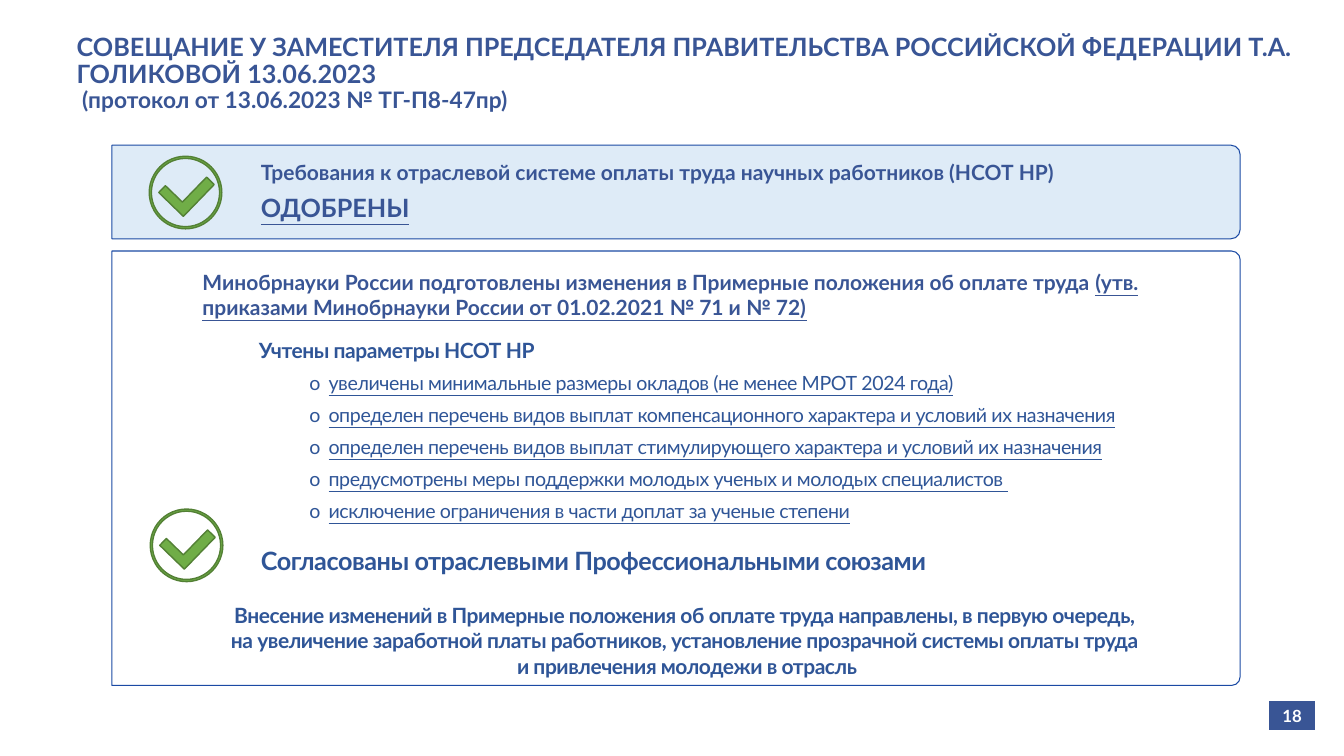
from lxml import etree
from pptx import Presentation
from pptx import util as u
from pptx.dml.color import RGBColor
from pptx.enum import shapes, text
from pptx.oxml.ns import qn

NAVY = RGBColor(0x39, 0x55, 0x95)
BLUE = RGBColor(0x2F, 0x55, 0x97)
EDGE = RGBColor(0x1B, 0x4A, 0xA4)
PALE = RGBColor(0xDE, 0xEB, 0xF7)
GREEN = RGBColor(0x70, 0xAD, 0x47)
DARK_GREEN = RGBColor(0x53, 0x80, 0x35)
WHITE = RGBColor(0xFF, 0xFF, 0xFF)
FONT = "Lato"
LEFT, CENTER, JUSTIFY = text.PP_ALIGN.LEFT, text.PP_ALIGN.CENTER, text.PP_ALIGN.JUSTIFY
SHAPE = shapes.MSO_SHAPE

SLIDE_W, SLIDE_H = 13.33, 7.5
PANEL_X, PANEL_W = 1.11, 11.19
CHANGES = [
    "увеличены минимальные размеры окладов (не менее МРОТ 2024 года)",
    "определен перечень видов выплат компенсационного характера и условий их назначения",
    "определен перечень видов выплат стимулирующего характера и условий их назначения",
    "предусмотрены меры поддержки молодых ученых и молодых специалистов ",
    "исключение ограничения в части доплат за ученые степени",
]


def inches(*lengths):
    return [u.Inches(length) for length in lengths]


def add_run(p, words, size, color, spacing=0, **formats):
    """Add words to a paragraph; each newline becomes a line break."""
    for i, line in enumerate(words.split("\n")):
        if i:
            p.add_line_break()
        if not line:
            continue
        r = p.add_run()
        r.text = line
        r.font.color.rgb = color
        values = {"name": FONT, "size": u.Pt(size), "bold": True, **formats}
        for name, value in values.items():
            setattr(r.font, name, value)
        if spacing:
            r._r.get_or_add_rPr().set("spc", str(round(spacing * 100)))


def add_text(s, box, align, after=6):
    """Add a wrapping text box and return its frame and first paragraph."""
    tf = s.shapes.add_textbox(*inches(*box)).text_frame
    tf.word_wrap = True
    tf.auto_size = text.MSO_AUTO_SIZE.SHAPE_TO_FIT_TEXT
    p = tf.paragraphs[0]
    p.alignment, p.space_after = align, u.Pt(after)
    return tf, p


def add_bullet(p):
    pPr = p._p.get_or_add_pPr()
    pPr.set("marL", str(u.Inches(0.69)))
    pPr.set("indent", str(u.Inches(-0.19)))
    pPr.set("lvl", "1")
    etree.SubElement(pPr, qn("a:buFont")).set("typeface", FONT)
    etree.SubElement(pPr, qn("a:buChar")).set("char", "o")


def add_figure(s, kind, box, adjustments, fill, line, width, rotation=0):
    sp = s.shapes.add_shape(kind, *inches(*box))
    sp.shadow.inherit = False
    sp.rotation = rotation
    for i, value in enumerate(adjustments):
        sp.adjustments[i] = value
    if fill is None:
        sp.fill.background()
    else:
        sp.fill.solid()
        sp.fill.fore_color.rgb = fill
    sp.line.color.rgb = line
    sp.line.width = u.Pt(width)


def add_panel(s, x, y, w, h, corner, fill=None):
    """Frame with two rounded corners on its right side."""
    turned = (x + (w - h) / 2, y + (h - w) / 2, h, w)
    add_figure(s, SHAPE.ROUND_2_SAME_RECTANGLE, turned, (corner, 0), fill, EDGE, 0.75, 90)


def add_check(s, x, y):
    """Green tick inside a ring."""
    add_figure(s, SHAPE.DONUT, (x, y, 0.72, 0.72), (0.03,), GREEN, DARK_GREEN, 1)
    add_figure(s, SHAPE.CORNER, (x + 0.15, y + 0.15, 0.44, 0.34), (0.31, 0.28),
               GREEN, DARK_GREEN, 1, 314.1)


def add_title(s, x, y, w, h):
    sp = s.shapes.title
    sp.left, sp.top, sp.width, sp.height = inches(x, y, w, h)
    tf = sp.text_frame
    for name, value in {"word_wrap": True, "auto_size": text.MSO_AUTO_SIZE.NONE,
                        "vertical_anchor": text.MSO_ANCHOR.MIDDLE}.items():
        setattr(tf, name, value)
    p = tf.paragraphs[0]
    p.alignment, p.line_spacing, p.space_after = LEFT, 0.9, u.Pt(12)
    add_run(p, "СОВЕЩАНИЕ У ЗАМЕСТИТЕЛЯ ПРЕДСЕДАТЕЛЯ ПРАВИТЕЛЬСТВА РОССИЙСКОЙ "
               "ФЕДЕРАЦИИ Т.А. ГОЛИКОВОЙ 13.06.2023\n", 18, NAVY)
    add_run(p, " (протокол от 13.06.2023 № ТГ-П8-47пр)", 16.2, NAVY)


def add_approval(s, x, y, w, h):
    """Upper panel: the approved requirements."""
    add_panel(s, x, y, w, h, 0.1, PALE)
    add_check(s, x + 0.37, y + 0.11)
    tf, p = add_text(s, (x + 1.38, y + 0.09, 9.63, 0.74), JUSTIFY)
    add_run(p, "Требования к отраслевой системе оплаты труда научных работников (НСОТ НР)",
            15, NAVY)
    p = tf.add_paragraph()
    p.alignment, p.space_after = JUSTIFY, u.Pt(6)
    add_run(p, "ОДОБРЕНЫ", 18, NAVY, underline=True)


def add_amendments(s, x, y, w, h):
    """Lower panel: the prepared changes and their purpose."""
    add_panel(s, x, y, w, h, 0.02)

    # Lead sentence
    tf, p = add_text(s, (x + 0.8, y + 0.13, 9.94, 0.61), LEFT)
    add_run(p, "Минобрнауки России подготовлены изменения в Примерные положения "
               "об оплате труда ", 15, NAVY)
    add_run(p, "(утв. приказами Минобрнауки России от 01.02.2021 № 71 и № 72)",
            15, NAVY, underline=True)

    # List of changes
    tf, p = add_text(s, (x + 1.36, y + 0.81, 9.65, 1.95), JUSTIFY)
    add_run(p, "Учтены параметры НСОТ НР", 15, BLUE, -0.3)
    for change in CHANGES:
        p = tf.add_paragraph()
        add_bullet(p)
        p.alignment, p.space_after = JUSTIFY, u.Pt(6)
        add_run(p, change, 14, BLUE, -0.3, bold=False, underline=True)

    # Agreement with the unions
    add_check(s, x + 0.38, y + 2.56)
    tf, p = add_text(s, (x + 1.38, y + 2.87, 8.3, 0.4), LEFT, 0)
    add_run(p, "Согласованы отраслевыми Профессиональными союзами", 18, BLUE, -0.3)

    # Purpose
    tf, p = add_text(s, (x + 0.67, y + 3.44, 10.07, 0.86), CENTER)
    add_run(p, "Внесение изменений в Примерные положения об оплате труда направлены, "
               "в первую очередь, \nна увеличение заработной платы работников, установление "
               "прозрачной системы оплаты труда \nи привлечения молодежи в отрасль",
            15, BLUE, -0.3)


def add_page_number(s, x, y, w, h):
    table = s.shapes.add_table(1, 1, *inches(x, y, w, h)).table
    table.first_row = table.horz_banding = False
    cell = table.cell(0, 0)
    cell.fill.solid()
    cell.fill.fore_color.rgb = NAVY
    cell.vertical_anchor = text.MSO_ANCHOR.MIDDLE
    p = cell.text_frame.paragraphs[0]
    p.alignment = CENTER
    add_run(p, "18", 12, WHITE)


def main():
    prs = Presentation()
    prs.slide_width, prs.slide_height = inches(SLIDE_W, SLIDE_H)
    s = prs.slides.add_slide(prs.slide_layouts.get_by_name("Title Only"))
    add_title(s, 0.66, 0.27, 12.68, 0.93)
    add_approval(s, PANEL_X, 1.44, PANEL_W, 0.93)
    add_amendments(s, PANEL_X, 2.49, PANEL_W, 4.31)
    add_page_number(s, 12.58, 6.95, 0.47, 0.28)
    prs.save("out.pptx")


if __name__ == "__main__":
    main()
